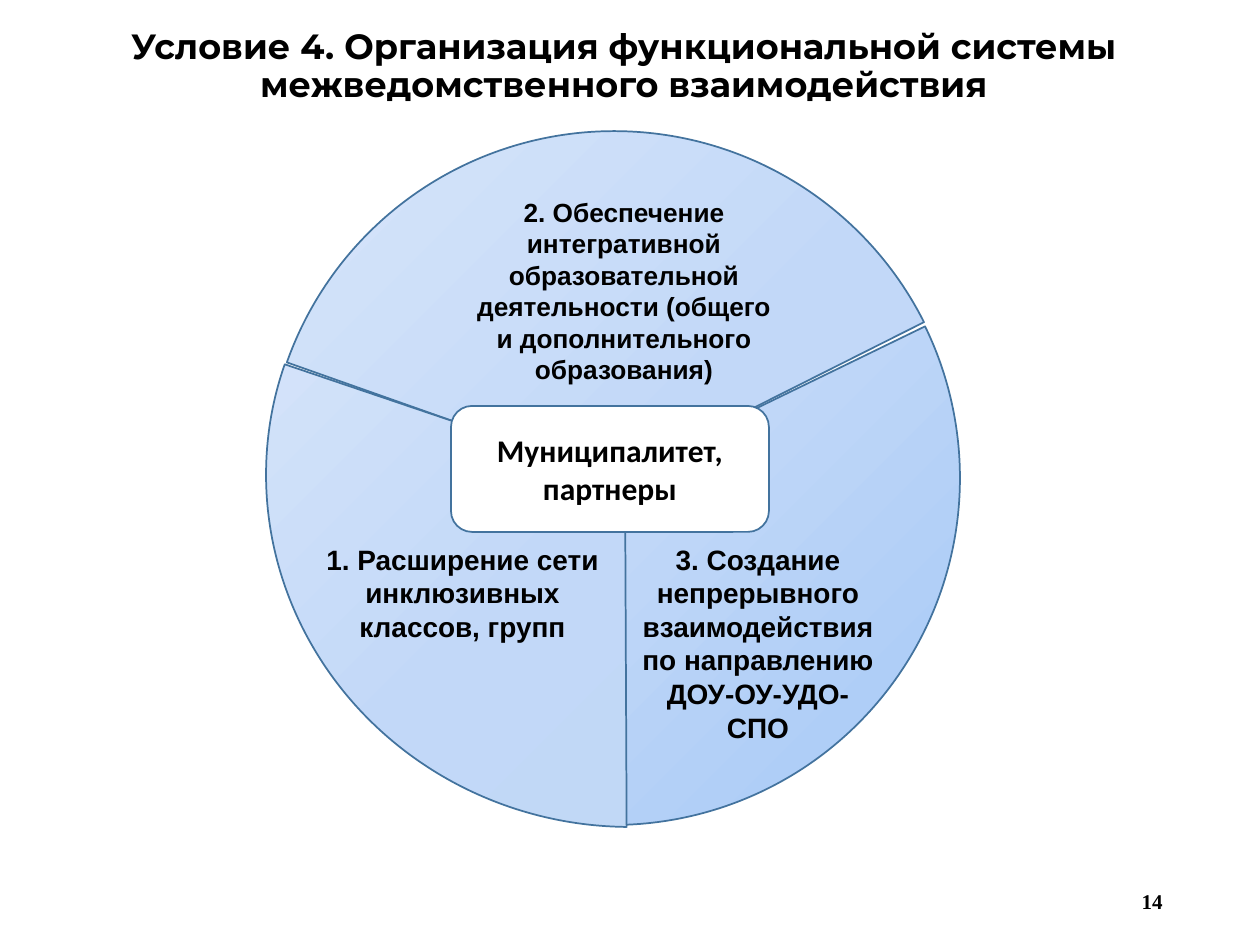
"""Build a slide with a three-sector wheel of interagency cooperation."""
from dataclasses import dataclass

from lxml import etree
from pptx import Presentation
from pptx import util as u
from pptx.dml.color import RGBColor
from pptx.enum import shapes, text
from pptx.oxml.ns import qn

PX = 914400 / 126


@dataclass(frozen=True)
class Theme:
    ink: str = "000000"
    paper: str = "FFFFFF"
    outline: str = "43739E"
    pale: str = "E1EBFB"
    middle: str = "C2D8F8"
    soft: str = "BDD7EE"
    strong: str = "9AC3F5"
    heading: tuple = ("Montserrat", 20)
    hub: tuple = ("Calibri", 18)
    sector: tuple = ("Arial", 16)
    sector_small: tuple = ("Arial", 15)
    number: tuple = ("Times New Roman", 12)


THEME = Theme()
CENTER = text.PP_ALIGN.CENTER
MIDDLE = text.MSO_ANCHOR.MIDDLE
TOP = text.MSO_ANCHOR.TOP


def emu(box):
    return [u.Emu(round(px * PX)) for px in box]


def apply(target, values):
    for name, value in values.items():
        setattr(target, name, value)


def write(holder, words, style, align=CENTER, anchor=MIDDLE, spacing=1.0, grow=False):
    face, size = style
    frame = holder.text_frame
    fit = text.MSO_AUTO_SIZE.SHAPE_TO_FIT_TEXT if grow else text.MSO_AUTO_SIZE.NONE
    apply(frame, {"word_wrap": True, "auto_size": fit, "vertical_anchor": anchor})
    line = frame.paragraphs[0]
    apply(line, {"alignment": align, "line_spacing": spacing})
    run = line.add_run()
    run.text = words
    apply(run.font, {"name": face, "size": u.Pt(size), "bold": True})
    run.font.color.rgb = RGBColor.from_string(THEME.ink)


def add_outlined(slide, kind, box):
    shape = slide.shapes.add_shape(kind, *emu(box))
    shape.shadow.inherit = False
    shape.line.color.rgb = RGBColor.from_string(THEME.outline)
    shape.line.width = u.Pt(1)
    return shape


def fill_radial(shape, core):
    shape.fill.gradient()
    gradient = shape._element.spPr.find(qn("a:gradFill"))
    for child in list(gradient):
        gradient.remove(child)
    gradient.set("rotWithShape", "0")
    stops = etree.SubElement(gradient, qn("a:gsLst"))
    for percent, colour in ((0, core), (49, THEME.middle), (100, THEME.pale)):
        stop = etree.SubElement(stops, qn("a:gs"), pos=str(percent * 1000))
        etree.SubElement(stop, qn("a:srgbClr"), val=colour)
    circle = etree.SubElement(gradient, qn("a:path"), path="circle")
    etree.SubElement(circle, qn("a:fillToRect"), l="100000", t="100000")


def add_sector(slide, box, rotation, angles, core):
    sector = add_outlined(slide, shapes.MSO_SHAPE.PIE, box)
    sector.rotation = rotation
    for index, degrees in enumerate(angles):
        sector.adjustments[index] = degrees * 0.6
    fill_radial(sector, core)


def add_label(slide, box, words, style, **layout):
    write(slide.shapes.add_textbox(*emu(box)), words, style, **layout)


def add_hub(slide, box, words):
    hub = add_outlined(slide, shapes.MSO_SHAPE.ROUNDED_RECTANGLE, box)
    hub.fill.solid()
    hub.fill.fore_color.rgb = RGBColor.from_string(THEME.paper)
    write(hub, words, THEME.hub)


def set_title(slide, box, words):
    title = slide.shapes.title
    apply(title, dict(zip(("left", "top", "width", "height"), emu(box))))
    write(title, words, THEME.heading, spacing=0.9)


def main():
    deck = Presentation()
    apply(deck, {"slide_width": u.Inches(10), "slide_height": u.Inches(7.5)})
    slide = deck.slides.add_slide(deck.slide_layouts[5])
    set_title(slide, (81, 28, 1086, 79),
              "Условие 4. Организация функциональной системы межведомственного взаимодействия")

    sectors = (
        ((266, 131, 694, 694), 326.3, (7.79, 123.85), THEME.strong),
        ((267, 131, 694, 694), 221.3, (338.17, 111.98), THEME.soft),
        ((278, 120, 694, 719), 101.4, (348.34, 97.29), THEME.soft),
    )
    for sector in sectors:
        add_sector(slide, *sector)

    labels = (
        ((312, 536, 301, 115), "1. Расширение сети инклюзивных классов, групп", THEME.sector),
        ((625, 536, 266, 217), "3. Создание непрерывного взаимодействия по направлению "
         "ДОУ-ОУ-УДО-СПО", THEME.sector),
        ((459, 190, 330, 205), "2. Обеспечение интегративной образовательной деятельности "
         "(общего и дополнительного образования)", THEME.sector_small),
    )
    for label in labels:
        add_label(slide, *label, anchor=TOP, grow=True)

    add_hub(slide, (451, 406, 318, 126), "Муниципалитет, партнеры")
    add_label(slide, (891, 876, 284, 50), "14", THEME.number, align=text.PP_ALIGN.RIGHT)
    deck.save("out.pptx")


if __name__ == "__main__":
    main()
